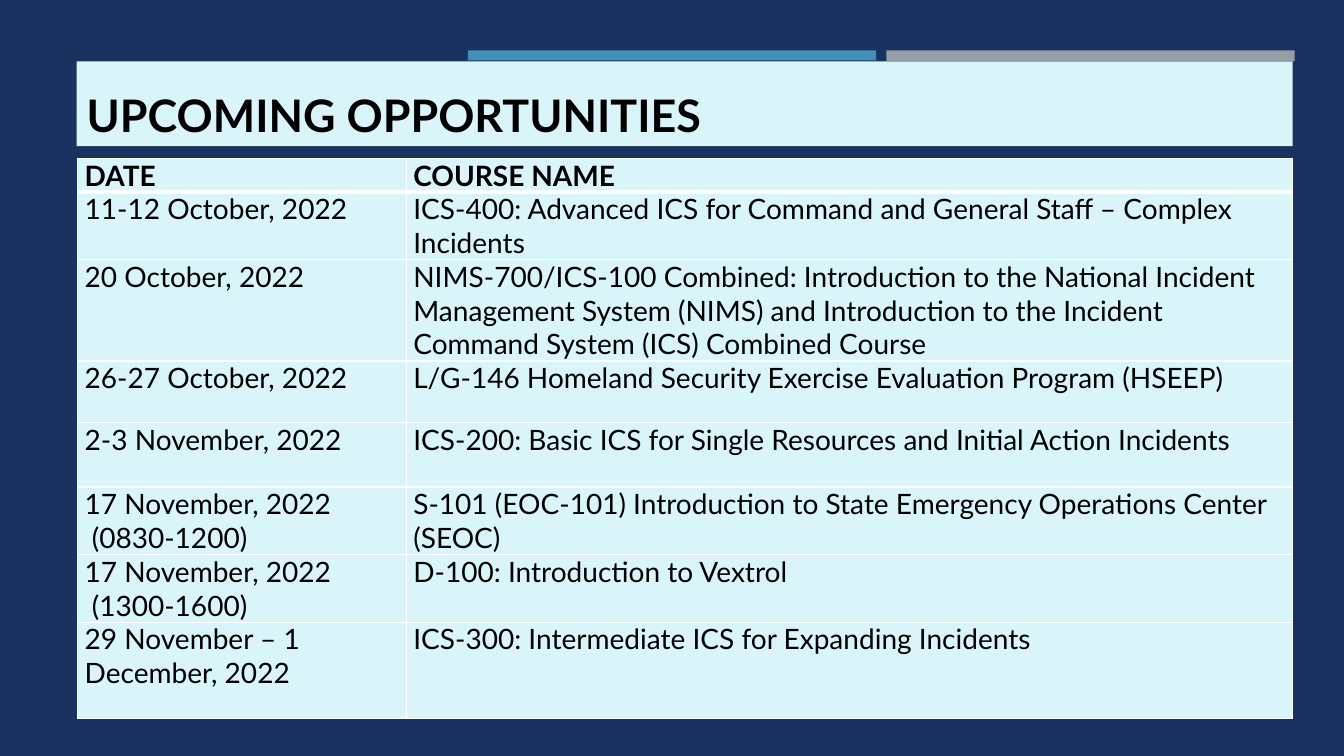
import dataclasses

import pptx
import pptx.dml.color
import pptx.enum.shapes
import pptx.enum.text
import pptx.oxml.ns
import pptx.slide
import pptx.table
import pptx.util
from lxml import etree

SCALE = 9144  # EMU per px, 100 px to the inch


@dataclasses.dataclass(frozen=True)
class Theme:
    navy: str = "1A3260"
    pale: str = "DAF5FA"
    blue: str = "4590B8"
    grey: str = "969FA7"
    ink: str = "000000"
    rule: str = "FFFFFF"
    font: str = "Lato"
    head: int = 32
    body: int = 20
    thin: int = 1
    thick: int = 3


@dataclasses.dataclass(frozen=True)
class Bar:
    left: int
    top: int
    width: int
    height: int
    fill: str


@dataclasses.dataclass(frozen=True)
class Course:
    date: str
    name: str
    height: int


THEME = Theme()
BARS = [
    Bar(879, 50, 405, 11, THEME.grey),
    Bar(464, 50, 405, 10, THEME.blue),
]
COLS = [326, 879]
ROWS = [
    Course("DATE", "COURSE NAME", 31),
    Course("11-12 October, 2022",
           "ICS-400: Advanced ICS for Command and General Staff – Complex Incidents", 54),
    Course("20 October, 2022",
           "NIMS-700/ICS-100 Combined: Introduction to the National Incident "
           "Management System (NIMS) and Introduction to the Incident "
           "Command System (ICS) Combined Course", 83),
    Course("26-27 October, 2022",
           "L/G-146 Homeland Security Exercise Evaluation Program (HSEEP)", 61),
    Course("2-3 November, 2022",
           "ICS-200: Basic ICS for Single Resources and Initial Action Incidents", 64),
    Course("17 November, 2022\n (0830-1200)",
           "S-101 (EOC-101) Introduction to State Emergency Operations Center (SEOC)", 63),
    Course("17 November, 2022\n (1300-1600)", "D-100: Introduction to Vextrol", 64),
    Course("29 November – 1 December, 2022",
           "ICS-300: Intermediate ICS for Expanding Incidents", 96),
]


def px(size: int) -> pptx.util.Emu:
    return pptx.util.Emu(size * SCALE)


def paint(fill, color: str) -> None:
    fill.solid()
    fill.fore_color.rgb = pptx.dml.color.RGBColor.from_string(color)


def style(frame, size: int, bold: bool) -> None:
    for para in frame.paragraphs:
        para.alignment = pptx.enum.text.PP_ALIGN.LEFT
        font = para.font
        font.name = THEME.font
        font.size = pptx.util.Pt(size)
        font.bold = bold
        font.color.rgb = pptx.dml.color.RGBColor.from_string(THEME.ink)


def draw_bar(slide: pptx.slide.Slide, bar: Bar) -> None:
    shape = slide.shapes.add_shape(
        pptx.enum.shapes.MSO_SHAPE.RECTANGLE,
        px(bar.left), px(bar.top), px(bar.width), px(bar.height))
    shape.shadow.inherit = False
    paint(shape.fill, bar.fill)
    shape.line.fill.background()


def draw_title(slide: pptx.slide.Slide, text: str) -> None:
    title = slide.shapes.title
    title.left, title.top = px(76), px(61)
    title.width, title.height = px(1206), px(84)
    paint(title.fill, THEME.pale)
    frame = title.text_frame
    frame.text = text
    frame.auto_size = pptx.enum.text.MSO_AUTO_SIZE.NONE
    frame.vertical_anchor = pptx.enum.text.MSO_ANCHOR.BOTTOM
    style(frame, THEME.head, True)


def add_edge(cell: pptx.table._Cell, side: str, width: int) -> None:
    qn = pptx.oxml.ns.qn
    line = etree.SubElement(cell._tc.get_or_add_tcPr(), qn(f"a:ln{side}"),
                            w=str(pptx.util.Pt(width)))
    fill = etree.SubElement(line, qn("a:solidFill"))
    etree.SubElement(fill, qn("a:srgbClr"), val=THEME.rule)


def fill_cell(cell: pptx.table._Cell, text: str, row: int) -> None:
    cell.text = text
    cell.margin_left = cell.margin_right = px(7)
    cell.margin_top = cell.margin_bottom = 0
    style(cell.text_frame, THEME.body, row == 0)
    # The rule under the header row is heavier
    top = THEME.thick if row == 1 else THEME.thin
    bottom = THEME.thick if row == 0 else THEME.thin
    for side, width in zip("LRTB", (THEME.thin, THEME.thin, top, bottom)):
        add_edge(cell, side, width)
    paint(cell.fill, THEME.pale)


def draw_table(slide: pptx.slide.Slide, rows: list[Course]) -> None:
    table = slide.shapes.add_table(
        len(rows), len(COLS), px(77), px(157), px(sum(COLS)),
        px(sum(row.height for row in rows))).table
    table.horz_banding = False
    for col, width in zip(table.columns, COLS):
        col.width = px(width)
    for i, row in enumerate(rows):
        table.rows[i].height = px(row.height)
        for j, text in enumerate((row.date, row.name)):
            fill_cell(table.cell(i, j), text, i)


def main() -> None:
    deck = pptx.Presentation()
    deck.slide_width, deck.slide_height = px(1333), px(750)
    slide = deck.slides.add_slide(deck.slide_layouts[5])
    paint(slide.background.fill, THEME.navy)
    # Accent bars above the title
    for bar in BARS:
        draw_bar(slide, bar)
    # Title and course schedule
    draw_title(slide, "UPCOMING OPPORTUNITIES")
    draw_table(slide, ROWS)
    deck.save("out.pptx")


if __name__ == "__main__":
    main()
